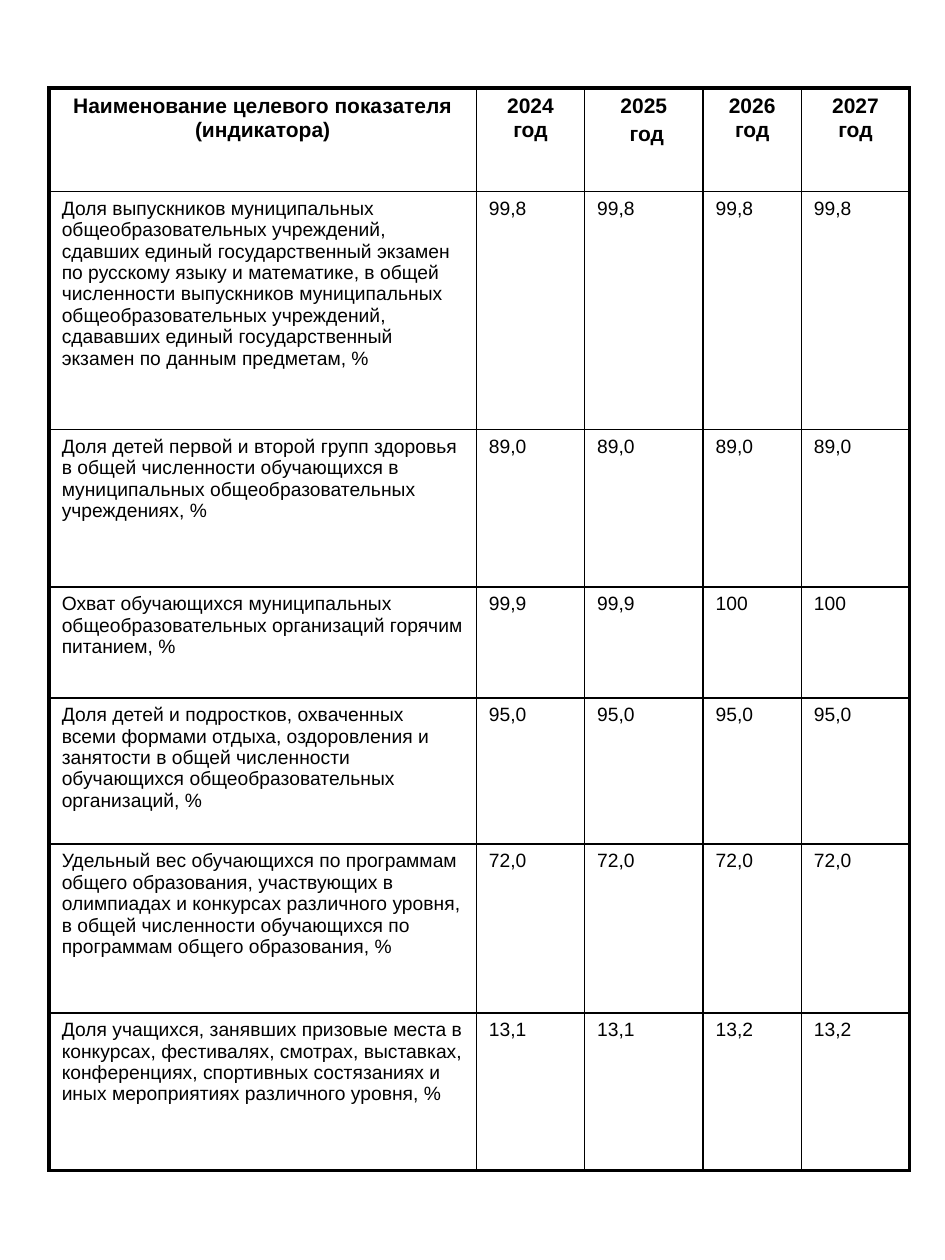
"""Build a slide with a table of education target indicators by year."""
from lxml.etree import SubElement
from pptx import Presentation
from pptx.dml.color import RGBColor
from pptx.enum.text import PP_ALIGN as Align
from pptx.oxml.ns import qn
from pptx.util import Inches, Pt

BLACK = RGBColor(0x00, 0x00, 0x00)
FONT = "Arial"
OUTER, INNER = 2.25, 1
COLUMN_WIDTHS = [3.39, 0.86, 0.94, 0.78, 0.86]
ROW_HEIGHTS = [0.82, 1.89, 1.25, 0.88, 1.16, 1.34, 1.25]
HEADINGS = ["Наименование целевого показателя (индикатора)",
            "2024 год", "2025\n год", "2026 год", "2027 год"]
INDICATORS = [
    ["Доля выпускников муниципальных общеобразовательных учреждений, "
     "сдавших единый государственный экзамен по русскому языку и математике, "
     "в общей численности выпускников муниципальных общеобразовательных "
     "учреждений, сдававших единый государственный экзамен по данным "
     "предметам, %", "99,8", "99,8", "99,8", "99,8"],
    ["Доля детей первой и второй групп здоровья в общей численности "
     "обучающихся в муниципальных общеобразовательных учреждениях, %",
     "89,0", "89,0", "89,0", "89,0"],
    ["Охват обучающихся муниципальных общеобразовательных организаций "
     "горячим питанием, %", "99,9", "99,9", "100", "100"],
    ["Доля детей и подростков, охваченных всеми формами отдыха, оздоровления "
     "и занятости в общей численности обучающихся общеобразовательных "
     "организаций, %", "95,0", "95,0", "95,0", "95,0"],
    ["Удельный вес обучающихся по программам общего образования, участвующих "
     "в олимпиадах и конкурсах различного уровня, в общей численности "
     "обучающихся по программам общего образования, %",
     "72,0", "72,0", "72,0", "72,0"],
    ["Доля учащихся, занявших призовые места в конкурсах, фестивалях, "
     "смотрах, выставках, конференциях, спортивных состязаниях и иных "
     "мероприятиях различного уровня, %", "13,1", "13,1", "13,2", "13,2"],
]


def write_text(frame, text, size=11, bold=False, align=Align.LEFT):
    frame.text = text
    for paragraph in frame.paragraphs:
        paragraph.alignment = align
        paragraph.space_before = Pt(size * 0.2)
        font = paragraph.runs[0].font
        font.name, font.size, font.bold = FONT, Pt(size), bold
        font.color.rgb = BLACK


def draw_borders(cell, **widths):
    properties = cell._tc.get_or_add_tcPr()
    for position, (side, width) in enumerate(widths.items()):
        border = SubElement(properties, qn(f"a:ln{side}"), w=str(Pt(width)))
        fill = SubElement(border, qn("a:solidFill"))
        SubElement(fill, qn("a:srgbClr"), val=str(BLACK))
        properties.insert(position, border)


def add_indicator_table(slide, rows):
    last_row, last_column = len(rows) - 1, len(COLUMN_WIDTHS) - 1
    table = slide.shapes.add_table(
        len(rows), len(COLUMN_WIDTHS), Inches(0.39), Inches(0.7),
        Inches(sum(COLUMN_WIDTHS)), Inches(sum(ROW_HEIGHTS))).table
    table.first_row = table.horz_banding = False
    for column, width in zip(table.columns, COLUMN_WIDTHS):
        column.width = Inches(width)
    for row, height in zip(table.rows, ROW_HEIGHTS):
        row.height = Inches(height)
    for r, texts in enumerate(rows):
        style = {"size": 12, "bold": True, "align": Align.CENTER} if r == 0 else {}
        for c, text in enumerate(texts):
            cell = table.cell(r, c)
            write_text(cell.text_frame, text, **style)
            cell.fill.background()
            draw_borders(cell,
                         L=OUTER if c == 0 else INNER,
                         R=OUTER if c == last_column else INNER,
                         T=OUTER if r == 0 else INNER,
                         B=OUTER if r == last_row else INNER)


def main():
    deck = Presentation()
    deck.slide_width, deck.slide_height = Inches(7.5), Inches(10)
    slide = deck.slides.add_slide(deck.slide_layouts[6])
    add_indicator_table(slide, [HEADINGS, *INDICATORS])
    deck.save("out.pptx")


if __name__ == "__main__":
    main()
